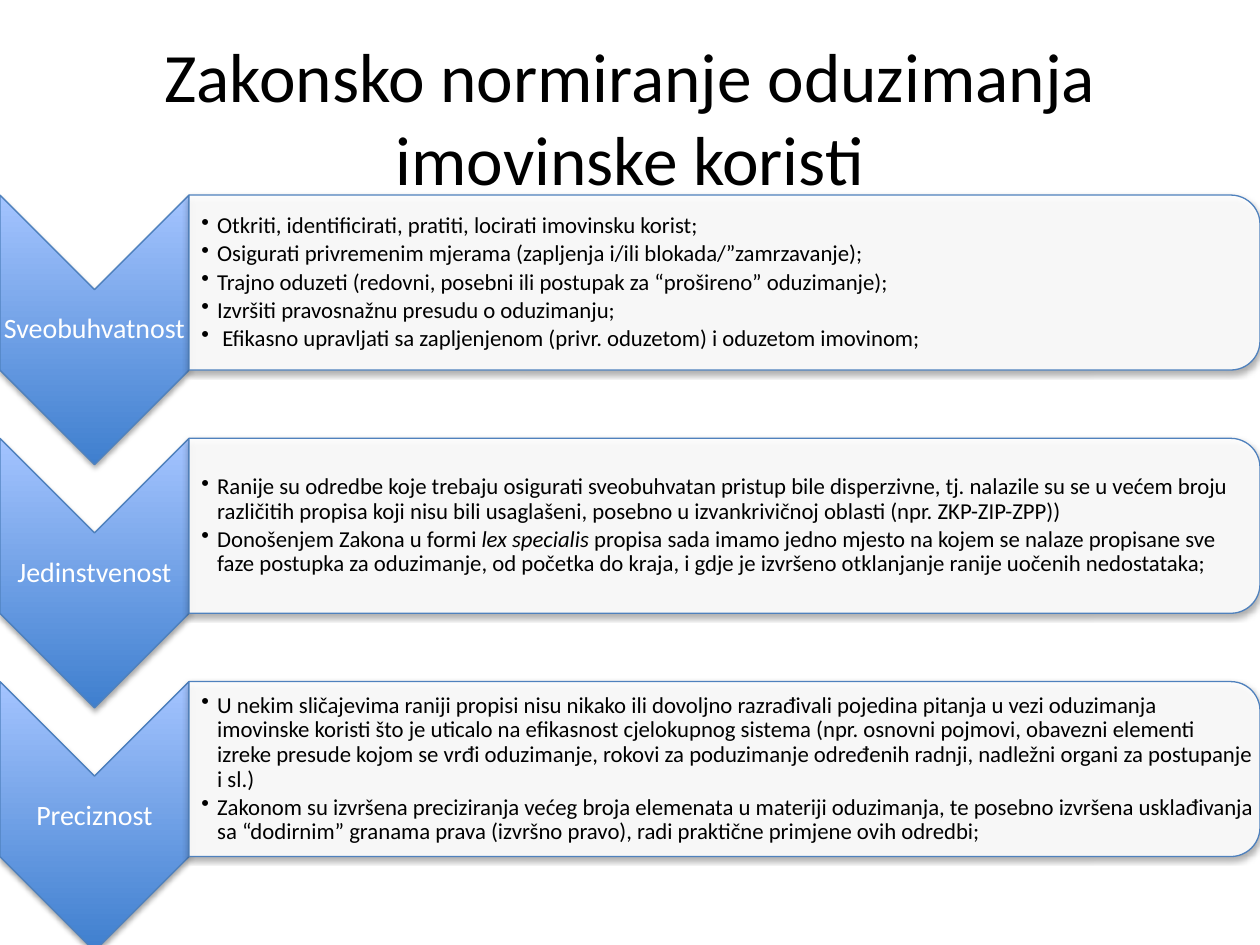
"""Builds a slide with three chevron bands on seizing the proceeds of crime."""
from dataclasses import dataclass

from lxml import etree
from pptx import Presentation
from pptx import util as u
from pptx.dml.color import RGBColor
from pptx.enum import shapes, text
from pptx.oxml import ns

Pt = u.Pt


@dataclass(frozen=True)
class Theme:
    font: str = "Calibri"
    ink: str = "000000"
    pale: str = "FFFFFF"
    edge: str = "4F81BD"
    dark: str = "3F7FCE"
    light: str = "A4C4FF"
    head: float = 39.6
    label: float = 16
    item: float = 13


def add(node, tag, **attrs):
    child = etree.SubElement(node, ns.qn(tag))
    for key, value in attrs.items():
        child.set(key, str(value))
    return child


class Deck:
    def __init__(self, theme):
        self.theme = theme
        self.prs = Presentation()
        self.prs.slide_width, self.prs.slide_height = Pt(720), Pt(540)
        self.slide = self.prs.slides.add_slide(self.prs.slide_layouts[5])

    def style(self, para, size, color):
        para.font.name = self.theme.font
        para.font.size = Pt(size)
        para.font.color.rgb = RGBColor.from_string(color)

    def title(self, words):
        box = self.slide.shapes.title
        box.left, box.top, box.width, box.height = Pt(36), Pt(21.6), Pt(648), Pt(90)
        frame = box.text_frame
        frame.text = words
        frame.auto_size = text.MSO_AUTO_SIZE.NONE
        frame.vertical_anchor = text.MSO_ANCHOR.MIDDLE
        self.style(frame.paragraphs[0], self.theme.head, self.theme.ink)

    def turned(self, kind, left, top, wide, high):
        """Adds a quarter-turned shape that fills the given upright area."""
        shape = self.slide.shapes.add_shape(
            kind, Pt(left + (wide - high) / 2), Pt(top + (high - wide) / 2),
            Pt(high), Pt(wide))
        shape.rotation = 90
        shape.line.color.rgb = RGBColor.from_string(self.theme.edge)
        shape.line.width = Pt(0.75)
        return shape

    def shade(self, shape):
        shape.shadow.inherit = False
        effects = shape._element.spPr.find(ns.qn("a:effectLst"))
        outer = add(effects, "a:outerShdw", blurRad=Pt(3.15), dist=Pt(1.81),
                    dir=5400000, rotWithShape=0)
        add(add(outer, "a:srgbClr", val=self.theme.ink), "a:alpha", val=35000)

    def arrow(self, *area):
        shape = self.turned(shapes.MSO_SHAPE.CHEVRON, *area)
        fill = shape.fill
        fill.gradient()
        fill.gradient_angle = 90
        for stop, color in zip(fill.gradient_stops, (self.theme.dark, self.theme.light)):
            stop.color.rgb = RGBColor.from_string(color)
        shape._element.spPr.find(ns.qn("a:gradFill")).set("rotWithShape", "0")
        self.shade(shape)

    def panel(self, *area):
        shape = self.turned(shapes.MSO_SHAPE.ROUND_2_SAME_RECTANGLE, *area)
        shape.fill.solid()
        shape.fill.fore_color.rgb = RGBColor.from_string(self.theme.pale)
        color = shape._element.spPr.find(ns.qn("a:solidFill"))[0]
        add(color, "a:alpha", val=90000)
        self.shade(shape)

    def frame(self, left, top, wide, high, inset):
        box = self.slide.shapes.add_textbox(Pt(left), Pt(top), Pt(wide), Pt(high))
        frame = box.text_frame
        frame.word_wrap = True
        frame.vertical_anchor = text.MSO_ANCHOR.MIDDLE
        frame.margin_left = Pt(inset)
        frame.margin_top = frame.margin_right = frame.margin_bottom = Pt(0.7)
        return frame

    def label(self, words, *area):
        para = self.frame(*area, 0.7).paragraphs[0]
        para.text = words
        para.alignment = text.PP_ALIGN.CENTER
        para.line_spacing = 0.9
        self.style(para, self.theme.label, self.theme.pale)

    def points(self, items, *area):
        """Adds a bulleted list, with text between asterisks in italics."""
        frame = self.frame(*area, 7.2)
        for i, item in enumerate(items):
            para = frame.add_paragraph() if i else frame.paragraphs[0]
            para.line_spacing = 0.9
            para.space_after = Pt(2)
            self.style(para, self.theme.item, self.theme.ink)
            for j, part in enumerate(item.split("*")):
                run = para.add_run()
                run.text = part
                if j % 2:
                    run.font.italic = True
            props = para._p.get_or_add_pPr()
            props.set("marL", str(Pt(9)))
            props.set("indent", str(Pt(-9)))
            bullet = etree.Element(ns.qn("a:buChar"), char="•")
            props.find(ns.qn("a:defRPr")).addprevious(bullet)

    def band(self, top, name, items):
        self.arrow(0, top, 108, 154)
        self.label(name, 0, top + 54, 108, 46)
        self.panel(108, top, 612, 100)
        self.points(items, 108, top + 5, 608, 90)


BANDS = {
    "Sveobuhvatnost": [
        "Otkriti, identificirati, pratiti, locirati imovinsku korist;",
        "Osigurati privremenim mjerama (zapljenja i/ili blokada/”zamrzavanje);",
        "Trajno oduzeti (redovni, posebni ili postupak za “prošireno” oduzimanje);",
        "Izvršiti pravosnažnu presudu o oduzimanju;",
        " Efikasno upravljati sa zapljenjenom (privr. oduzetom) i oduzetom imovinom;",
    ],
    "Jedinstvenost": [
        "Ranije su odredbe koje trebaju osigurati sveobuhvatan pristup bile "
        "disperzivne, tj. nalazile su se u većem broju različitih propisa koji nisu "
        "bili usaglašeni, posebno u izvankrivičnoj oblasti (npr. ZKP-ZIP-ZPP))",
        "Donošenjem Zakona u formi *lex specialis* propisa sada imamo jedno mjesto na "
        "kojem se nalaze propisane sve faze postupka za oduzimanje, od početka do "
        "kraja, i gdje je izvršeno otklanjanje ranije uočenih nedostataka;",
    ],
    "Preciznost": [
        "U nekim sličajevima raniji propisi nisu nikako ili dovoljno razrađivali "
        "pojedina pitanja u vezi oduzimanja imovinske koristi što je uticalo na "
        "efikasnost cjelokupnog sistema (npr. osnovni pojmovi, obavezni elementi "
        "izreke presude kojom se vrđi oduzimanje, rokovi za poduzimanje određenih "
        "radnji, nadležni organi za postupanje i sl.)",
        "Zakonom su izvršena preciziranja većeg broja elemenata u materiji "
        "oduzimanja, te posebno izvršena usklađivanja sa “dodirnim” granama prava "
        "(izvršno pravo), radi praktične primjene ovih odredbi;",
    ],
}


def main():
    deck = Deck(Theme())
    deck.title("Zakonsko normiranje oduzimanja imovinske koristi")
    for row, (name, items) in enumerate(BANDS.items()):
        deck.band(111.5 + 139 * row, name, items)
    deck.prs.save("out.pptx")


if __name__ == "__main__":
    main()
